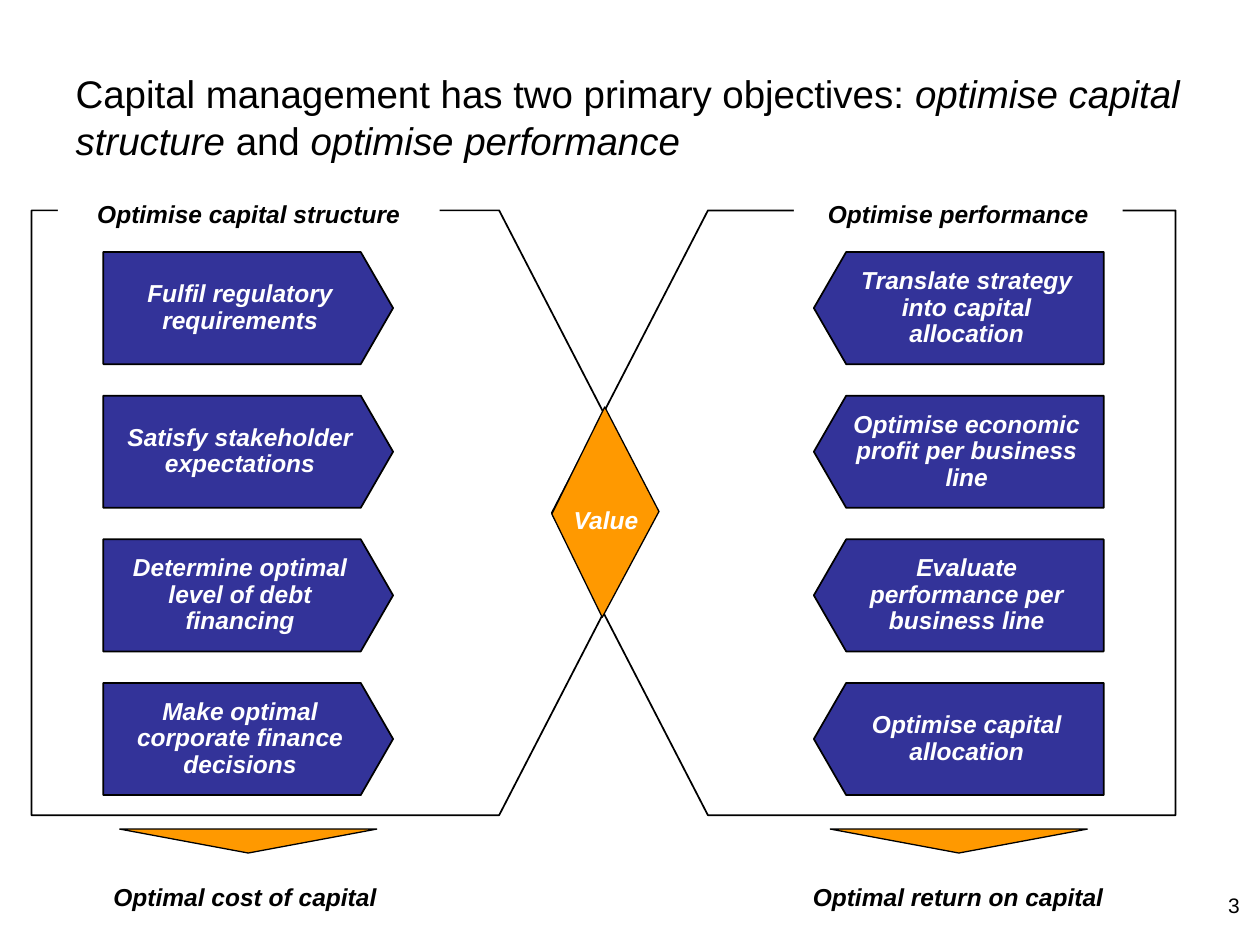
from pptx import Presentation, util as u
from pptx.dml.color import RGBColor
from pptx.enum import shapes, text

BLACK, WHITE, NAVY, ORANGE = "000000", "FFFFFF", "333399", "FF9900"
MS = shapes.MSO_SHAPE

# Left edges of the two columns, and the rows of arrows
COLUMNS = (0.82, 6.46)
ROW_TOP, ROW_STEP = 2, 1.14
ARROW_W, ARROW_H = 2.3, 0.89

ARROWS = (
    ("Fulfil regulatory requirements",
     "Satisfy stakeholder expectations",
     "Determine optimal level of debt financing",
     "Make optimal corporate finance decisions"),
    ("Translate strategy into capital allocation",
     "Optimise economic profit per business line",
     "Evaluate performance per business line",
     "Optimise capital allocation"),
)
HEADINGS = (("Optimise capital structure", 0.46, 3.03),
            ("Optimise performance", 6.3, 2.61))
OUTCOMES = (("Optimal cost of capital", 0.75, 2.39),
            ("Optimal return on capital", 6.29, 2.63))


def rgb(value):
    return RGBColor.from_string(value)


def inches(*lengths):
    return [u.Inches(n) for n in lengths]


def paint(sp, fill, line=None):
    """Give a shape a flat fill and an optional black outline in points."""
    sp.shadow.inherit = False
    sp.fill.solid()
    sp.fill.fore_color.rgb = rgb(fill)
    if line:
        sp.line.color.rgb = rgb(BLACK)
        sp.line.width = u.Pt(line)
    else:
        sp.line.fill.background()


def add_preset(s, kind, box, fill, line=None, adj=None):
    sp = s.shapes.add_shape(kind, *inches(*box))
    paint(sp, fill, line)
    if adj is not None:
        sp.adjustments[0] = adj
    return sp


def set_font(font, size, color):
    font.name = "Arial"
    font.size = u.Pt(size)
    font.color.rgb = rgb(color)


def write(sp, words, color=BLACK, margins=(0.1, 0.05), wrap=True,
          anchor=text.MSO_ANCHOR.TOP):
    """Put centred bold italic text in a shape or text box."""
    tf = sp.text_frame
    tf.word_wrap = wrap
    tf.vertical_anchor = anchor
    tf.margin_left = tf.margin_right = u.Inches(margins[0])
    tf.margin_top = tf.margin_bottom = u.Inches(margins[1])
    p = tf.paragraphs[0]
    p.text = words
    p.alignment = text.PP_ALIGN.CENTER
    set_font(p.font, 14, color)
    p.font.bold = p.font.italic = True
    return p


def add_title(s):
    title = s.shapes.title
    title.left, title.top, title.width, title.height = inches(0.5, 0.3, 9, 1.25)
    tf = title.text_frame
    tf.auto_size = text.MSO_AUTO_SIZE.NONE
    tf.vertical_anchor = text.MSO_ANCHOR.MIDDLE
    p = tf.paragraphs[0]
    p.alignment = text.PP_ALIGN.LEFT
    set_font(p.font, 22, BLACK)
    for words, italic in (("Capital management has two primary objectives: ", False),
                          ("optimise capital structure", True),
                          (" and ", False),
                          ("optimise performance", True)):
        r = p.add_run()
        r.text = words
        r.font.italic = italic


def add_frames(s):
    for left, turn in ((0.25, 0), (4.38, 180)):
        sp = add_preset(s, MS.PENTAGON, (left, 1.67, 4.95, 4.8), WHITE, 1, 0.258)
        sp.rotation = turn


def add_heading(s, words, left, width):
    sp = add_preset(s, MS.RECTANGLE, (left, 1.58, width, 0.23), WHITE)
    write(sp, words, margins=(0, 0))


def add_value_diamond(s):
    points = [inches(*xy) for xy in
              ((4.8, 3.23), (4.38, 4.08), (4.78, 4.9), (5.23, 4.06))]
    builder = s.shapes.build_freeform(*points[0])
    builder.add_line_segments(points[1:], close=True)
    paint(builder.convert_to_shape(), ORANGE, 0.75)
    label = s.shapes.add_textbox(*inches(4.45, 3.96, 0.72, 0.33))
    write(label, "Value", WHITE, wrap=False)


def add_arrow(s, words, column, row):
    box = (COLUMNS[column], ROW_TOP + row * ROW_STEP, ARROW_W, ARROW_H)
    sp = add_preset(s, MS.PENTAGON, box, NAVY, 1, 0.288)
    if column == 1:  # mirror so that it points left
        sp.element.spPr.get_or_add_xfrm().set("flipH", "1")
    p = write(sp, words, WHITE, anchor=text.MSO_ANCHOR.MIDDLE)
    p.line_spacing = 0.9


def add_outcome(s, words, left, width, column):
    box = (COLUMNS[column] + 0.13, 6.58, 2.04, 0.19)
    add_preset(s, MS.ISOSCELES_TRIANGLE, box, ORANGE, 0.75).rotation = 180
    write(s.shapes.add_textbox(*inches(left, 6.95, width, 0.33)), words)


def add_page_number(s):
    tf = s.shapes.add_textbox(*inches(9.53, 7.08, 0.31, 0.2)).text_frame
    tf.margin_left = tf.margin_right = tf.margin_top = tf.margin_bottom = 0
    tf.word_wrap = True
    p = tf.paragraphs[0]
    p.text = "3"
    p.alignment = text.PP_ALIGN.RIGHT
    set_font(p.font, 12, BLACK)


def main():
    prs = Presentation()
    prs.slide_width, prs.slide_height = inches(10, 7.5)
    s = prs.slides.add_slide(prs.slide_layouts[5])

    add_title(s)
    add_page_number(s)

    # Funnels with their headings, meeting at the value diamond
    add_frames(s)
    for heading in HEADINGS:
        add_heading(s, *heading)
    add_value_diamond(s)

    # Arrows and the outcome below each column
    for column, labels in enumerate(ARROWS):
        for row, words in enumerate(labels):
            add_arrow(s, words, column, row)
        add_outcome(s, *OUTCOMES[column], column)

    prs.save("out.pptx")


if __name__ == "__main__":
    main()
